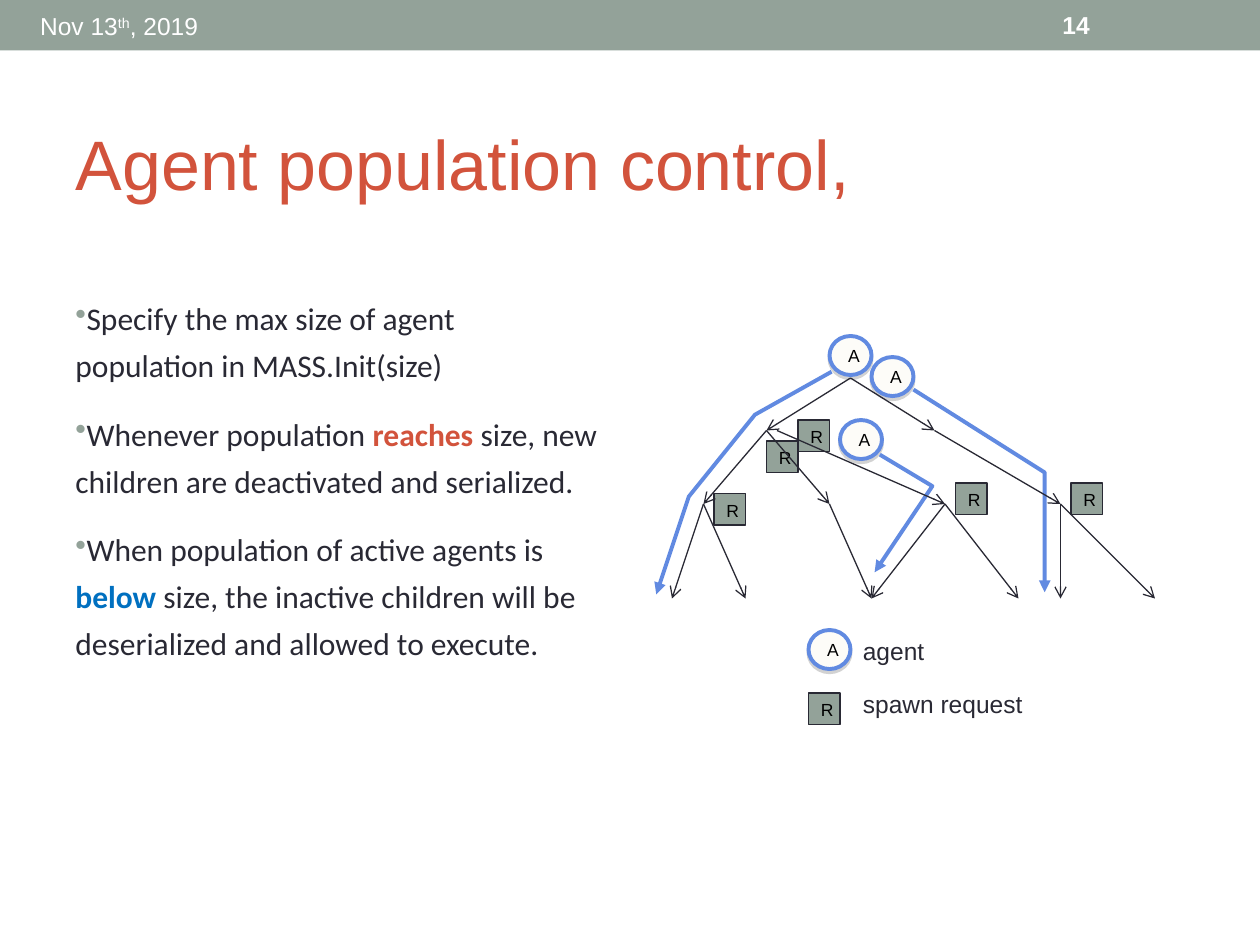
from typing import NamedTuple

from lxml import etree
from pptx import Presentation
from pptx import util as u
from pptx.dml.color import RGBColor
from pptx.enum import shapes, text
from pptx.oxml.ns import qn

CELL = u.Inches(1) / 12
COLUMNS, ROWS = 120, 90
SAGE, INK, RED, BLUE, SKY = "93A299", "292934", "D2533C", "618AE1", "0070C0"
WHITE, CREAM, BLACK, GREY = "FFFFFF", "FDFCF8", "000000", "808080"


class Point(NamedTuple):
    column: float
    row: float


class Marker(NamedTuple):
    letter: str
    outline: shapes.MSO_SHAPE
    width: float
    height: float
    fill: str
    edge: str
    edge_width: float
    anchor: text.MSO_ANCHOR
    shadowed: bool


class Span(NamedTuple):
    wording: str
    colour: str = ""
    raised: bool = False


AGENT = Marker("A", shapes.MSO_SHAPE.OVAL, 4, 3.72, CREAM, BLUE, 2.25,
               text.MSO_ANCHOR.MIDDLE, True)
REQUEST = Marker("R", shapes.MSO_SHAPE.RECTANGLE, 3, 3, SAGE, INK, 0.75,
                 text.MSO_ANCHOR.TOP, False)

PLACED = [
    (AGENT, [Point(79, 32), Point(83, 34), Point(80, 40)]),
    (REQUEST, [Point(76, 40), Point(68, 47), Point(102, 46), Point(73, 42), Point(91, 46)]),
]
TRAILS = [
    [Point(79.2, 35.4), Point(71.9, 39.5), Point(65.6, 47.3), Point(62.5, 56.6)],
    [Point(87, 37.1), Point(99.5, 45), Point(99.5, 56.4)],
    [Point(83.8, 43.3), Point(88.8, 46.3), Point(83.3, 54.5)],
]
ROOT, LEFT, LEFT_SIDE, RIGHT = Point(81, 36), Point(73, 41), Point(74, 41), Point(89, 41)
FIRST, SECOND, THIRD, FOURTH = (Point(column, 48) for column in (67, 79, 90, 101))
LEAF_ROW = 57
BRANCHES = [
    (ROOT, [LEFT, RIGHT]),
    (LEFT, [FIRST, SECOND]),
    (LEFT_SIDE, [THIRD]),
    (RIGHT, [FOURTH]),
    (FIRST, [Point(64, LEAF_ROW), Point(71, LEAF_ROW)]),
    (SECOND, [Point(83, LEAF_ROW)]),
    (THIRD, [Point(83, LEAF_ROW), Point(97, LEAF_ROW)]),
    (FOURTH, [Point(110, LEAF_ROW), Point(101, LEAF_ROW)]),
]
LEGEND = [
    (AGENT, Point(77, 60), "agent", Point(81, 60)),
    (REQUEST, Point(77, 66), "spawn request", Point(81, 65)),
]
POINTS = [
    [Span("Specify the max size of agent population in MASS.Init(size)")],
    [Span("Whenever population "), Span("reaches", RED),
     Span(" size, new children are deactivated and serialized.")],
    [Span("When population of active agents is "), Span("below", SKY),
     Span(" size, the inactive children will be deserialized and allowed to execute.")],
]


def cells(count: float) -> int:
    """Turn a number of grid cells into a length."""
    return round(count * CELL)


def rgb(colour: str) -> RGBColor:
    """Turn a hex string into a colour."""
    return RGBColor.from_string(colour)


def style_font(font, size: float, colour: str, name: str = "Arial", bold: bool = False) -> None:
    """Set the size, colour, typeface and weight of a font."""
    font.size, font.name, font.bold = u.Pt(size), name, bold
    font.color.rgb = rgb(colour)


def style_line(line, colour: str, width: float) -> None:
    """Set the colour and width of a line."""
    line.color.rgb = rgb(colour)
    line.width = u.Pt(width)


def add_arrowhead(shape, kind: str) -> None:
    """Put an arrowhead at the end of a line."""
    outline = shape.element.spPr.find(qn("a:ln"))
    etree.SubElement(outline, qn("a:tailEnd"), type=kind)


def add_shadow(shape) -> None:
    """Give a shape a short, hard shadow straight below it."""
    effects = shape.element.spPr.find(qn("a:effectLst"))
    shadow = etree.SubElement(effects, qn("a:outerShdw"), blurRad="0",
                              dist=str(u.Pt(1.8)), dir="5400000", rotWithShape="0")
    tint = etree.SubElement(shadow, qn("a:srgbClr"), val=GREY)
    etree.SubElement(tint, qn("a:alpha"), val="35000")


def add_bullet(paragraph) -> None:
    """Give a paragraph a sage bullet that hangs outside its margin."""
    properties = paragraph._p.get_or_add_pPr()
    properties.set("marL", "0")
    properties.set("indent", str(-u.Inches(0.39)))
    mark = etree.Element(qn("a:buChar"), char="•")
    tint = etree.Element(qn("a:buClr"))
    etree.SubElement(tint, qn("a:srgbClr"), val=SAGE)
    default_font = properties.find(qn("a:defRPr"))
    default_font.addprevious(tint)
    default_font.addprevious(mark)


def write_spans(paragraph, spans: list[Span]) -> None:
    """Write spans of text, with coloured ones bold and raised ones superscript."""
    for span in spans:
        run = paragraph.add_run()
        run.text = span.wording
        if span.colour:
            run.font.bold = True
            run.font.color.rgb = rgb(span.colour)
        if span.raised:
            run._r.get_or_add_rPr().set("baseline", "30000")


def add_label(slide, corner: Point, width: float, height: float, spans: list[Span],
              colour: str, bold: bool = False, wrap: bool = False):
    """Add one line of text with its top left at a grid point."""
    label = slide.shapes.add_textbox(*map(cells, (*corner, width, height)))
    label.text_frame.word_wrap = wrap
    line = label.text_frame.paragraphs[0]
    style_font(line.font, 14, colour, bold=bold)
    write_spans(line, spans)
    return label


def add_marker(slide, marker: Marker, corner: Point) -> None:
    """Add a lettered marker with its top left at a grid point."""
    token = slide.shapes.add_shape(
        marker.outline, *map(cells, (*corner, marker.width, marker.height)))
    token.fill.solid()
    token.fill.fore_color.rgb = rgb(marker.fill)
    style_line(token.line, marker.edge, marker.edge_width)
    token.shadow.inherit = False
    if marker.shadowed:
        add_shadow(token)
    token.text_frame.vertical_anchor = marker.anchor
    letter = token.text_frame.paragraphs[0]
    letter.text = marker.letter
    letter.alignment = text.PP_ALIGN.LEFT
    style_font(letter.font, 10, BLACK)


def add_trail(slide, stops: list[Point]) -> None:
    """Draw the path of an agent through its stops."""
    start, *others = [tuple(map(cells, stop)) for stop in stops]
    builder = slide.shapes.build_freeform(*start)
    builder.add_line_segments(others, close=False)
    trail = builder.convert_to_shape()
    trail.fill.background()
    style_line(trail.line, BLUE, 2.25)
    trail.shadow.inherit = False
    add_arrowhead(trail, "triangle")


def add_branch(slide, parent: Point, child: Point) -> None:
    """Draw an arrow from a parent node to its child."""
    branch = slide.shapes.add_connector(
        shapes.MSO_CONNECTOR.STRAIGHT, *map(cells, (*parent, *child)))
    style_line(branch.line, INK, 0.75)
    add_arrowhead(branch, "arrow")
    etree.SubElement(branch.element.spPr, qn("a:effectLst"))


def add_header(slide) -> None:
    """Add the band with the date and the page number."""
    band = slide.shapes.add_shape(shapes.MSO_SHAPE.RECTANGLE, 0, 0, cells(COLUMNS), cells(4.8))
    band.fill.solid()
    band.fill.fore_color.rgb = rgb(SAGE)
    band.line.fill.background()
    band.shadow.inherit = False
    page = add_label(slide, Point(100, 0.24), 14, 4.32, [Span("14")], WHITE, bold=True, wrap=True)
    page.text_frame.vertical_anchor = text.MSO_ANCHOR.MIDDLE
    date = [Span("Nov 13"), Span("th", raised=True), Span(", 2019")]
    add_label(slide, Point(2.64, 0.48), 17.8, 4, date, WHITE)


def set_title(slide) -> None:
    """Place and format the title."""
    title = slide.shapes.title
    title.left, title.top, title.width, title.height = map(cells, (6, 7, 108, 13))
    title.text_frame.auto_size = text.MSO_AUTO_SIZE.NONE
    title.text_frame.vertical_anchor = text.MSO_ANCHOR.MIDDLE
    heading = title.text_frame.paragraphs[0]
    heading.text = "Agent population control,"
    heading.alignment = text.PP_ALIGN.LEFT
    heading.line_spacing, heading.space_before = 1.5, u.Pt(3.6)
    style_font(heading.font, 40, RED)


def add_points(slide) -> None:
    """Add the bulleted explanation."""
    frame = slide.shapes.add_textbox(*map(cells, (6, 27, 52.2, 53))).text_frame
    frame.word_wrap = True
    for index, spans in enumerate(POINTS):
        point = frame.add_paragraph() if index else frame.paragraphs[0]
        point.line_spacing, point.space_before = 1.25, u.Pt(12)
        style_font(point.font, 18, INK, "Calibri")
        add_bullet(point)
        write_spans(point, spans)


def main() -> None:
    """Build the slide and save it."""
    deck = Presentation()
    deck.slide_width, deck.slide_height = cells(COLUMNS), cells(ROWS)
    slide = deck.slides.add_slide(deck.slide_layouts.get_by_name("Title Only"))
    add_header(slide)
    set_title(slide)
    add_points(slide)
    for marker, corners in PLACED:
        for corner in corners:
            add_marker(slide, marker, corner)
    for stops in TRAILS:
        add_trail(slide, stops)
    for parent, children in BRANCHES:
        for child in children:
            add_branch(slide, parent, child)
    for marker, corner, meaning, label_corner in LEGEND:
        add_marker(slide, marker, corner)
        add_label(slide, label_corner, 17.8, 4, [Span(meaning)], INK)
    deck.save("out.pptx")


if __name__ == "__main__":
    main()
